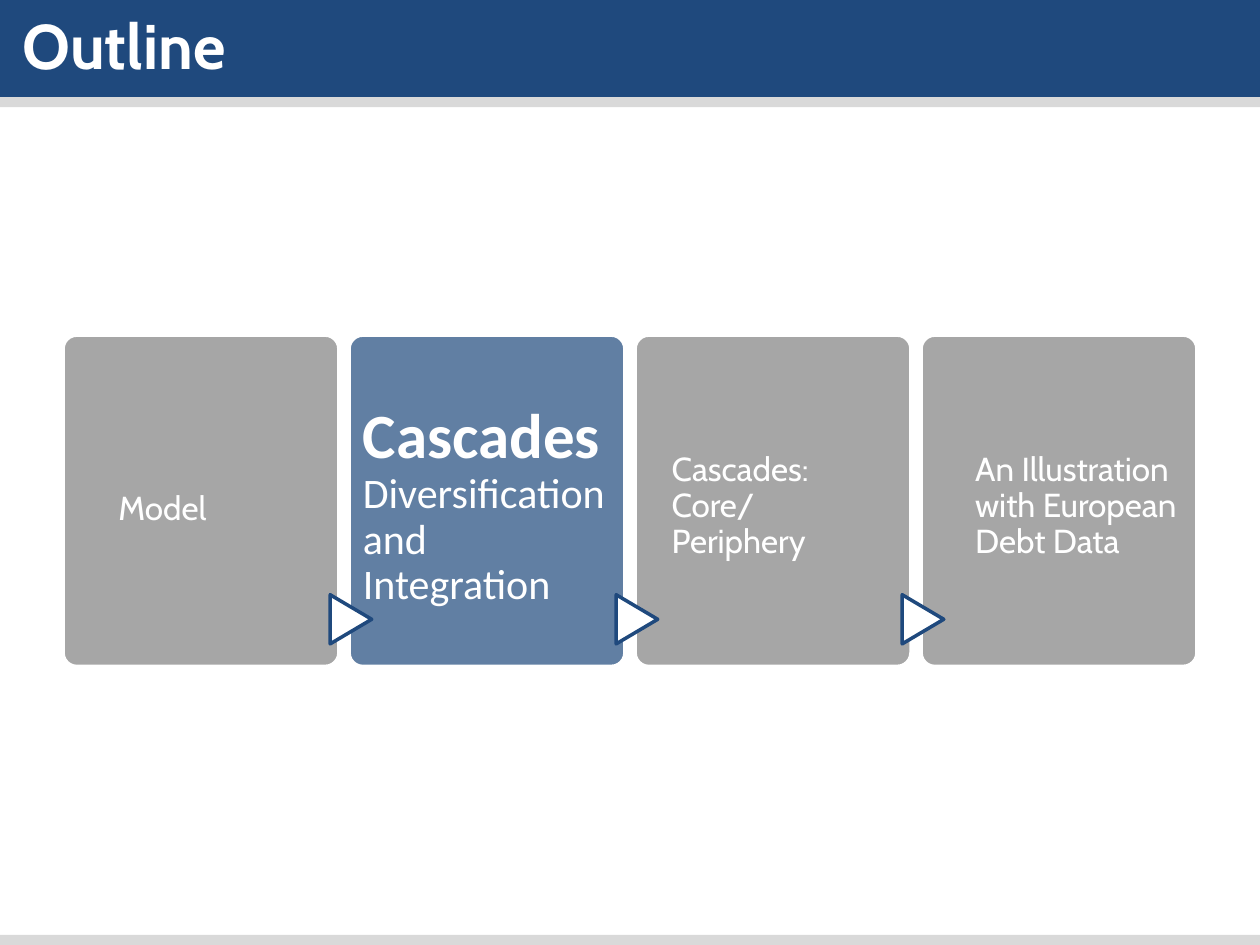
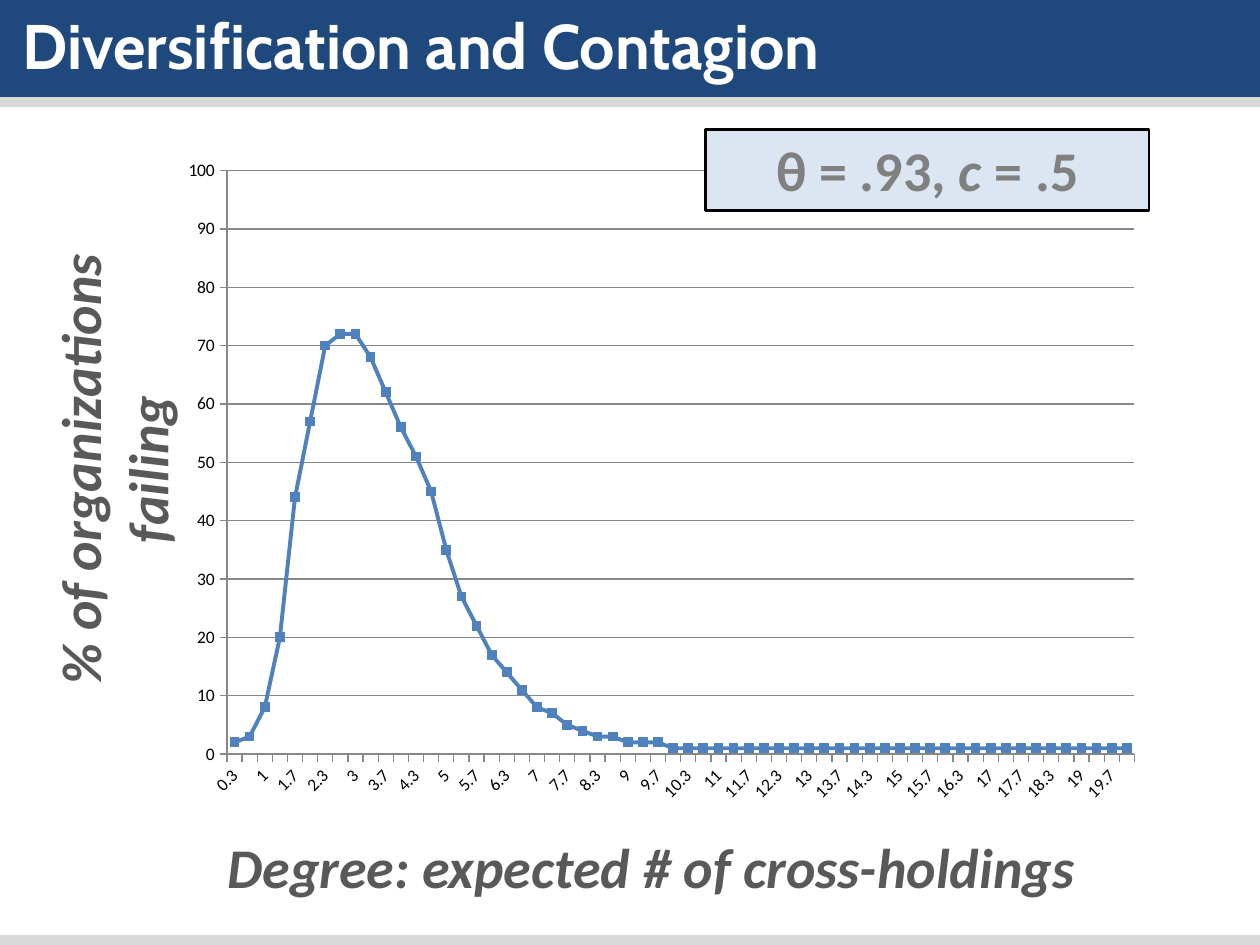
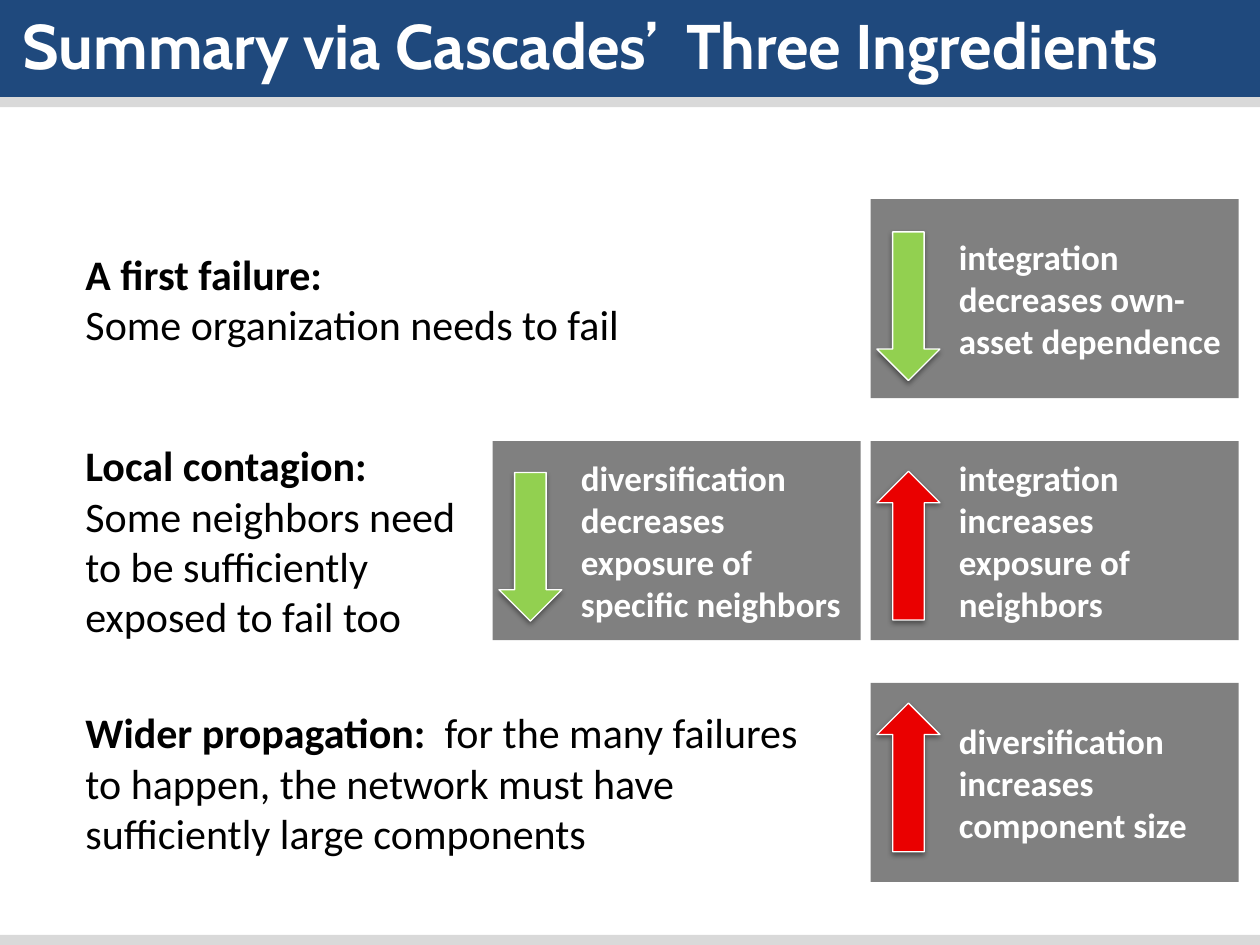
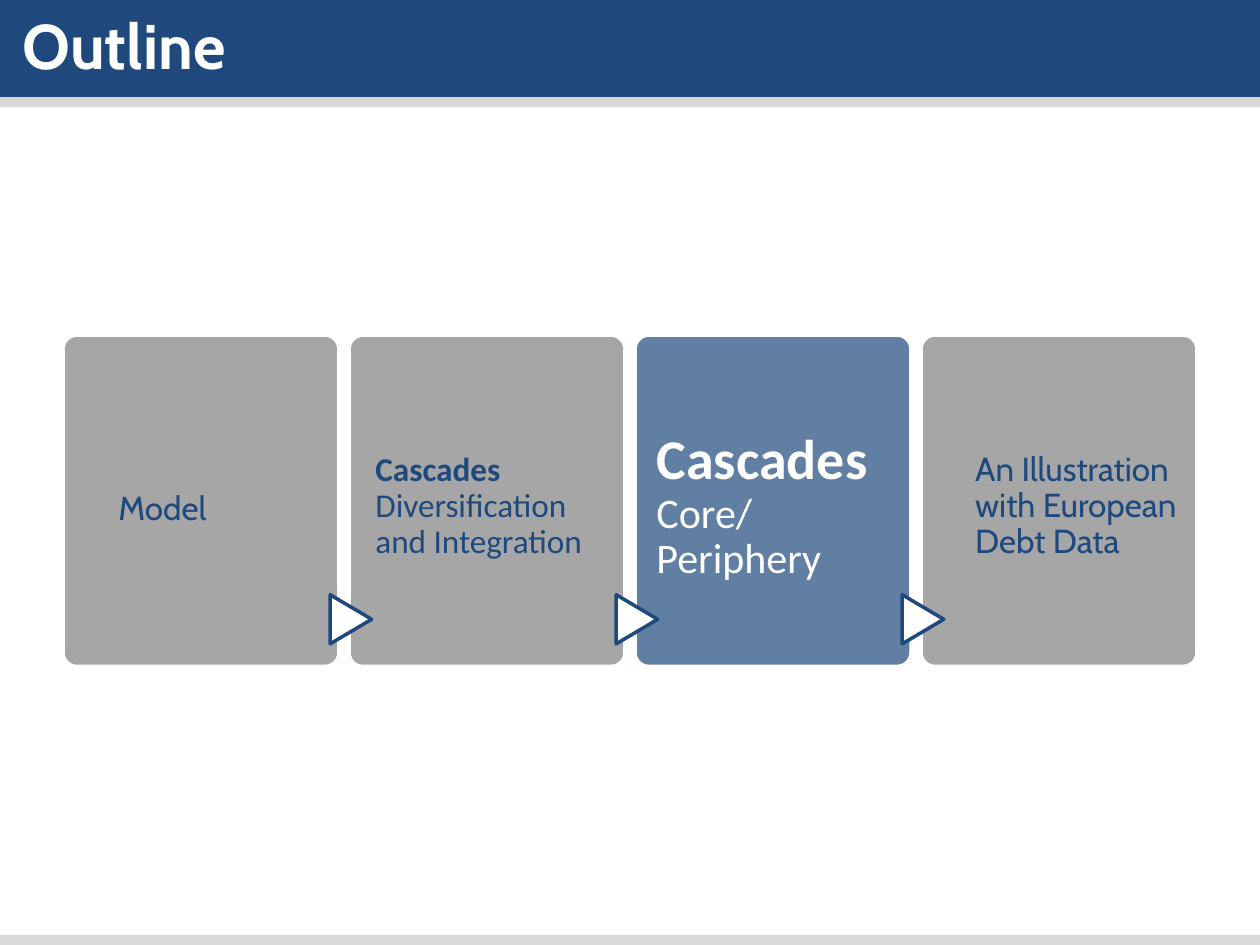
import collections
import dataclasses

import lxml.etree
import pptx
import pptx.chart.data
import pptx.dml.color
import pptx.enum.chart
import pptx.enum.shapes
import pptx.enum.text
import pptx.oxml.ns
import pptx.util

MSO = pptx.enum.shapes.MSO_SHAPE
ALIGN = pptx.enum.text.PP_ALIGN
ANCHOR = pptx.enum.text.MSO_ANCHOR
FIT = pptx.enum.text.MSO_AUTO_SIZE
Pt = pptx.util.Pt
qn = pptx.oxml.ns.qn

# The slide is a grid of 100 columns by 75 rows
COLS, ROWS = 100, 75
CELL = pptx.util.Inches(0.1)


@dataclasses.dataclass(frozen=True)
class Theme:
    navy: str = "1F497D"
    band: str = "D9D9D9"
    card: str = "A6A6A6"
    panel: str = "808080"
    label: str = "595959"
    pale: str = "DCE6F2"
    curve: str = "4F81BD"
    rule: str = "878787"
    green: str = "92D050"
    red: str = "EA0000"
    white: str = "FFFFFF"
    black: str = "000000"
    head: str = "Cabin"
    body: str = "Calibri"
    title: float = 36
    big: float = 32
    text: float = 24
    note: float = 20
    small: float = 19
    tick: float = 10


T = Theme()


class Box(collections.namedtuple("Box", "x y w h")):
    """A region in grid cells."""

    def sub(self, x, y, w, h):
        return Box(self.x + x, self.y + y, w, h)

    def emu(self):
        return [round(v * CELL) for v in self]


Label = collections.namedtuple("Label", "text x w top font sizes active",
                               defaults=(1, T.head, (T.small,), False))


# Shared helpers
def rgb(code):
    return pptx.dml.color.RGBColor.from_string(code)


def style(run, size, color, font=T.body, bold=False, slant=False):
    face = run.font
    face.name, face.size = font, Pt(size)
    face.bold, face.italic = bold, slant
    face.color.rgb = rgb(color)


def stroke(line, color, width):
    line.color.rgb = rgb(color)
    line.width = Pt(width)


def shape(slide, kind, box, fill, line=None, width=1):
    item = slide.shapes.add_shape(kind, *box.emu())
    item.shadow.inherit = False
    item.fill.solid()
    item.fill.fore_color.rgb = rgb(fill)
    if line:
        stroke(item.line, line, width)
    else:
        item.line.fill.background()
    return item


def frame(item, anchor=ANCHOR.TOP, pad=None):
    """Prepare a shape's text frame; pad is left, top, right, bottom in cells."""
    text = item.text_frame
    text.word_wrap = True
    text.vertical_anchor = anchor
    if pad:
        (text.margin_left, text.margin_top,
         text.margin_right, text.margin_bottom) = [round(v * CELL) for v in pad]
    return text


def write(para, parts, size, color, align=ALIGN.LEFT):
    """Add (text, bold, italic) parts as runs."""
    para.alignment = align
    for words, bold, slant in parts:
        run = para.add_run()
        run.text = words
        style(run, size, color, bold=bold, slant=slant)


def bands(deck, slide):
    """Draw the bands and hand them to the master."""
    tree = deck.slide_master.element.cSld.spTree
    rows = [(0, 7.7, T.navy), (7.7, 0.8, T.band), (74.2, 0.8, T.band)]
    for spot, (top, tall, color) in enumerate(rows, 2):
        band = shape(slide, MSO.RECTANGLE, Box(0, top, COLS, tall), color)
        tree.insert(spot, band.element)


def start(deck, words, wide):
    slide = deck.slides.add_slide(deck.slide_layouts.get_by_name("Title Only"))
    title = slide.shapes.title
    title.left, title.top, title.width, title.height = Box(0.8, 0, wide, 7.8).emu()
    text = frame(title)
    text.auto_size = FIT.NONE
    text.text = words
    para = text.paragraphs[0]
    para.alignment = ALIGN.LEFT
    style(para.runs[0], T.title, T.white, T.head, bold=True)
    return slide


# Outline slides
def card(slide, box, label, color):
    item = shape(slide, MSO.ROUNDED_RECTANGLE, box,
                 T.navy if label.active else T.card, T.white, 2)
    item.adjustments[0] = 0.05
    if label.active:
        tint = item.element.spPr.find(qn("a:solidFill"))[0]
        lxml.etree.SubElement(tint, qn("a:alpha")).set("val", "70000")
        color = T.white
    area = box.sub(label.x, 0, label.w, box.h)
    text = frame(slide.shapes.add_textbox(*area.emu()), ANCHOR.MIDDLE,
                 (0, label.top, 0, 0))
    text.text = label.text
    para = text.paragraphs[0]
    para.line_spacing = 0.9
    for spot, run in enumerate(para.runs):
        size = label.sizes[min(spot, len(label.sizes) - 1)]
        style(run, size, color, label.font,
              bold=spot == 0 and label.font == T.body)


def outline(slide, box, labels, color):
    gap = 0.8
    wide = (box.w - gap * (len(labels) - 1)) / len(labels)
    for spot, label in enumerate(labels):
        area = box.sub(spot * (wide + gap), 0, wide, box.h)
        card(slide, area, label, color)
        if spot:
            mark = shape(slide, MSO.FLOWCHART_EXTRACT,
                         area.sub(-1.8, 20.9, 3.9, 3.3), T.white, T.navy, 2)
            mark.rotation = 90


# Chart slide
def caption(slide, box, words, turn=False):
    text = frame(slide.shapes.add_textbox(*box.emu()))
    text.auto_size = FIT.SHAPE_TO_FIT_TEXT
    if turn:
        text._txBody.bodyPr.set("vert", "vert270")
    write(text.paragraphs[0], [(words, True, True)], T.big, T.label, ALIGN.CENTER)


def graph(slide, box):
    rise = [2, 3, 8, 20, 44, 57, 70, 72, 72]
    fall = [68, 62, 56, 51, 45, 35, 27, 22, 17, 14, 11, 8, 7, 5, 4, 3, 3, 2, 2, 2]
    vals = rise + fall
    count = 60
    data = pptx.chart.data.CategoryChartData()
    data.categories = [round(n / 3, 1) for n in range(1, count + 1)]
    data.add_series("Series 1", vals + [1] * (count - len(vals)))
    chart = slide.shapes.add_chart(
        pptx.enum.chart.XL_CHART_TYPE.LINE_MARKERS, *box.emu(), data).chart
    chart.has_legend = chart.has_title = False
    chart.font.name, chart.font.size = T.body, Pt(T.tick)
    chart.font.color.rgb = rgb(T.black)

    plot = chart.plots[0]
    plot.vary_by_categories = False
    line = plot.series[0]
    line.smooth = False
    stroke(line.format.line, T.curve, 2.25)
    mark = line.marker
    mark.style, mark.size = pptx.enum.chart.XL_MARKER_STYLE.SQUARE, 5
    mark.format.fill.solid()
    mark.format.fill.fore_color.rgb = rgb(T.curve)
    stroke(mark.format.line, T.curve, 0.75)

    cat, val = chart.category_axis, chart.value_axis
    for axis in (cat, val):
        axis.major_tick_mark = pptx.enum.chart.XL_TICK_MARK.OUTSIDE
        stroke(axis.format.line, T.rule, 0.75)
    val.minimum_scale, val.maximum_scale, val.major_unit = 0, 100, 10
    val.has_major_gridlines = True
    stroke(val.major_gridlines.format.line, T.rule, 0.75)
    cat.tick_labels.font.size = Pt(T.tick)
    cat._element.find(qn("c:txPr")).find(qn("a:bodyPr")).set("rot", "-2700000")


def contagion(slide, box):
    caption(slide, box.sub(8.6, 53.9, 80, 6.4), "Degree: expected # of cross-holdings")
    graph(slide, box.sub(10.3, 0, 78.2, 53))
    note = shape(slide, MSO.RECTANGLE, box.sub(52.9, -1.4, 35.2, 6.4),
                 T.pale, T.black, 1.5)
    write(frame(note).paragraphs[0],
          [("θ = .93, ", True, False), ("c ", True, True), ("= .5", True, False)],
          T.big, T.panel, ALIGN.CENTER)
    caption(slide, box.sub(0, 1.4, 7.4, 48.3), "% of organizations failing", True)


# Summary slide
def claim(slide, box, paras):
    text = frame(shape(slide, MSO.RECTANGLE, box, T.white), ANCHOR.MIDDLE)
    for spot, parts in enumerate(paras):
        para = text.add_paragraph() if spot else text.paragraphs[0]
        write(para, parts, T.text, T.black)


def effect(slide, box, words, rises, drop=2.5):
    panel = shape(slide, MSO.RECTANGLE, box, T.panel)
    text = frame(panel, ANCHOR.MIDDLE, (7, 0.5, 1, 0.5))
    text.text = words
    para = text.paragraphs[0]
    para.alignment = ALIGN.LEFT
    for run in para.runs:
        style(run, T.note, T.white, bold=True)
    arrow = shape(slide, MSO.DOWN_ARROW, box.sub(0.5, drop, 5, 11.8),
                  T.red if rises else T.green, T.white, 0.75)
    arrow.rotation = 180 if rises else 0
    shade(arrow)


def shade(item):
    glow = lxml.etree.SubElement(item.element.spPr.find(qn("a:effectLst")),
                                 qn("a:outerShdw"))
    for key, val in dict(blurRad=Pt(3.1), dist=Pt(1.6), dir=5400000,
                         rotWithShape=0).items():
        glow.set(key, str(int(val)))
    tint = lxml.etree.SubElement(glow, qn("a:srgbClr"))
    tint.set("val", T.black)
    lxml.etree.SubElement(tint, qn("a:alpha")).set("val", "38000")


def summary(slide, box):
    tall, wide, full, part = 15.8, 29.2, 59.2, 34
    step = (box.h - tall) / 2
    right = box.w - wide
    mid = right - wide - 0.8
    claims = [
        (full, [[("A first failure:", True, False)],
                [("Some organization needs to fail", False, False)]]),
        (part, [[("Local contagion:", True, False)],
                [("Some neighbors need to be sufficiently exposed to fail too",
                  False, False)]]),
        (full, [[("Wider propagation:  ", True, False),
                 ("for the many failures to happen, the network must have "
                  "sufficiently large components", False, False)]]),
    ]
    for row, (span, paras) in enumerate(claims):
        claim(slide, box.sub(0, row * step, span, tall), paras)
    effects = [
        (right, 0, "integration decreases own-asset dependence", False, 2.6),
        (right, 1, "integration\vincreases exposure of neighbors", True, 2.4),
        (mid, 1, "diversification decreases exposure of specific neighbors", False, 2.5),
        (right, 2, "diversification increases component size", True, 1.6),
    ]
    for left, row, words, rises, drop in effects:
        effect(slide, box.sub(left, row * step, wide, tall), words, rises, drop)


def main():
    deck = pptx.Presentation()
    deck.slide_width, deck.slide_height = COLS * CELL, ROWS * CELL
    strip = Box(5, 26.6, 90, 26.3)
    model = Label("Model", 4.4, 16.3, 1.4)
    debt = Label("An Illustration with European Debt Data", 4.3, 16.3)

    slide = start(deck, "Outline", 50)
    bands(deck, slide)
    outline(slide, strip, [
        model,
        Label("Cascades\vDiversification and Integration", 1.1, 20.6, 0.9,
              T.body, (T.title, T.text), True),
        Label("Cascades: Core/ Periphery", 2.9, 17.8),
        debt], T.white)

    slide = start(deck, "Diversification and Contagion", 75)
    contagion(slide, Box(3.1, 11.7, 88.5, 60.3))

    slide = start(deck, "Summary via Cascades’  Three Ingredients", 99.2)
    summary(slide, Box(5.8, 15.8, 92.5, 54.2))

    slide = start(deck, "Outline", 49.2)
    outline(slide, strip, [
        model,
        Label("Cascades\vDiversification and Integration", 2.1, 19.6, 0.9, T.body),
        Label("Cascades\vCore/\vPeriphery", 1.7, 18.9, 1,
              T.body, (T.big, T.text), True),
        debt], T.navy)

    deck.save("out.pptx")


if __name__ == "__main__":
    main()
